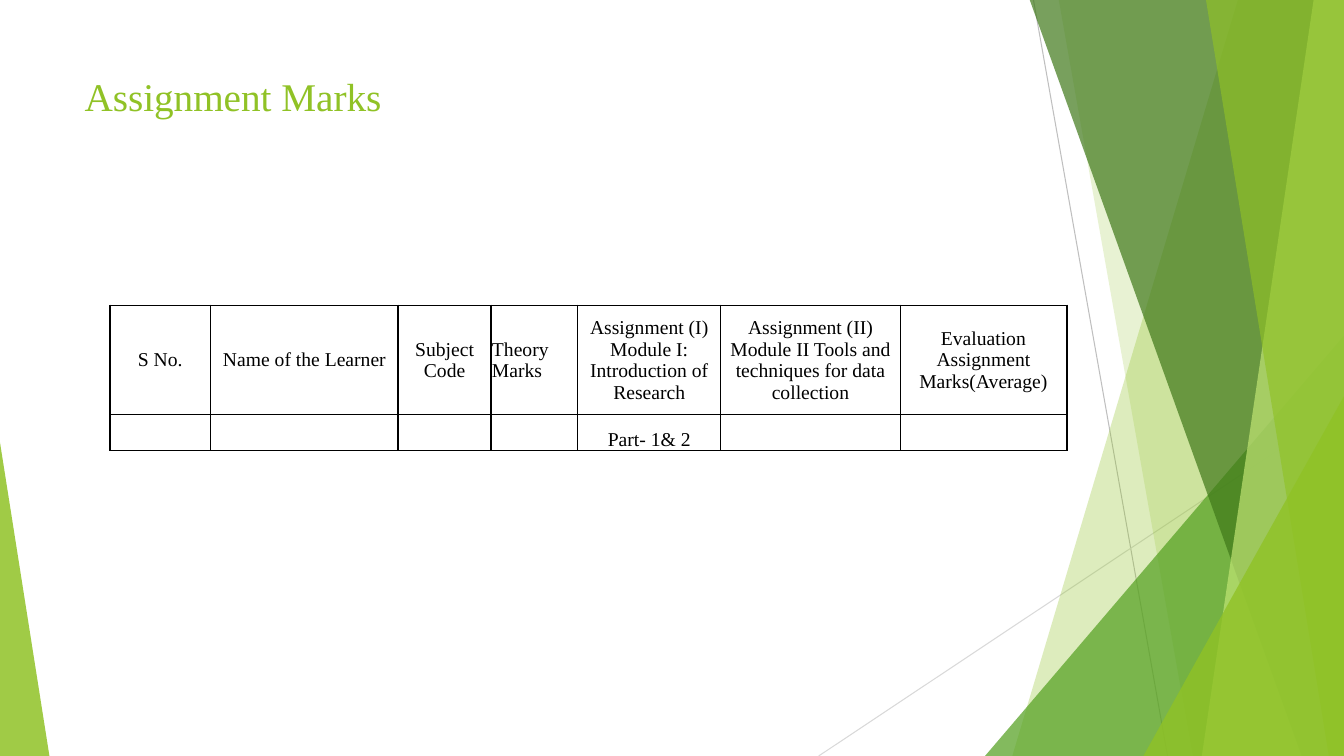
from lxml.etree import SubElement
from pptx import Presentation
from pptx.dml.color import RGBColor
from pptx.enum.shapes import MSO_CONNECTOR, MSO_SHAPE
from pptx.enum.text import MSO_ANCHOR, PP_ALIGN
from pptx.oxml.ns import qn
from pptx.util import Inches, Pt

COLORS = {
    "lime": "90C226", "green": "54A021", "dark": "3F7819", "pale": "C0E474",
    "gray": "BFBFBF", "light": "D9D9D9", "black": "000000",
}
FONT = "Times New Roman"
WIDTH, HEIGHT, TOP = 13.33, 7.5, -0.01
HEADS = [
    "S No.", "Name of the Learner", "Subject Code", "Theory Marks",
    "Assignment (I) Module I: Introduction of Research",
    "Assignment (II) Module II Tools and techniques for data collection",
    "Evaluation Assignment Marks(Average)",
]
ROWS = [HEADS, ["", "", "", "", "Part- 1& 2", "", ""]]
COLS = [1, 1.86, 0.92, 0.86, 1.42, 1.78, 1.65]
TALL = [1.08, 0.36]
THICK = {0, 2, len(COLS)}


def color(name):
    """Return the named color."""
    return RGBColor.from_string(COLORS[name])


def paint(shape, name, alpha):
    """Fill a shape with a see-through color and no outline."""
    shape.shadow.inherit = False
    shape.line.fill.background()
    shape.fill.solid()
    shape.fill.fore_color.rgb = color(name)
    tint = shape.fill._xPr.find(".//" + qn("a:srgbClr"))
    SubElement(tint, qn("a:alpha"), val=str(alpha * 1000))


def add_line(slide, start, end, name):
    """Draw a thin straight line."""
    ends = [Inches(n) for n in (*start, *end)]
    line = slide.shapes.add_connector(MSO_CONNECTOR.STRAIGHT, *ends)
    line.line.color.rgb = color(name)
    line.line.width = Pt(0.75)
    SubElement(line._element.spPr, qn("a:effectLst"))


def add_band(slide, top, base, name, alpha):
    """Draw a slanted band that reaches the right edge."""
    points = [(top, TOP), (WIDTH, TOP), (WIDTH, HEIGHT), (base, HEIGHT)]
    points = [(Inches(x), Inches(y)) for x, y in points]
    path = slide.shapes.build_freeform(*points[0])
    path.add_line_segments(points[1:], close=True)
    paint(path.convert_to_shape(), name, alpha)


def add_wedge(slide, left, top, width, peak, name, alpha):
    """Draw a triangle that stands on the bottom edge."""
    box = [Inches(n) for n in (left, top, width, HEIGHT - top)]
    wedge = slide.shapes.add_shape(MSO_SHAPE.ISOSCELES_TRIANGLE, *box)
    wedge.adjustments[0] = peak
    paint(wedge, name, alpha)


def set_font(para, size, name):
    """Format every run of a paragraph."""
    for run in para.runs:
        run.font.name = FONT
        run.font.size = Pt(size)
        run.font.color.rgb = color(name)


def add_title(slide, text):
    """Add the slide title."""
    box = [Inches(n) for n in (0.74, 0.67, 9.4, 1.44)]
    frame = slide.shapes.add_textbox(*box).text_frame
    frame.word_wrap = True
    frame.text = text
    set_font(frame.paragraphs[0], 28, "lime")


def add_border(cell, side, width):
    """Draw one border of a cell."""
    props = cell._tc.get_or_add_tcPr()
    line = SubElement(props, qn("a:ln" + side), w=str(Pt(width)))
    fill = SubElement(line, qn("a:solidFill"))
    SubElement(fill, qn("a:srgbClr"), val=COLORS["black"])


def fill_cell(cell, text, row, col):
    """Set the text, margins and borders of a cell."""
    cell.margin_left = cell.margin_right = cell.margin_top = Inches(0.01)
    cell.margin_bottom = 0
    cell.vertical_anchor = MSO_ANCHOR.BOTTOM if row else MSO_ANCHOR.MIDDLE
    cell.text_frame.text = text
    para = cell.text_frame.paragraphs[0]
    para.alignment = PP_ALIGN.JUSTIFY if col == 3 else PP_ALIGN.CENTER
    set_font(para, 14, "black")
    heavy = {
        "L": col in THICK, "R": col + 1 in THICK,
        "T": row == 0, "B": row == len(ROWS) - 1,
    }
    for side, bold in heavy.items():
        add_border(cell, side, 1.5 if bold else 1)
    cell.fill.background()


def add_marks(slide):
    """Add the table of marks."""
    box = [Inches(n) for n in (1.09, 3.03, sum(COLS), sum(TALL))]
    table = slide.shapes.add_table(len(ROWS), len(COLS), *box).table
    table.first_row = table.horz_banding = False
    for col, width in enumerate(COLS):
        table.columns[col].width = Inches(width)
    for row, texts in enumerate(ROWS):
        table.rows[row].height = Inches(TALL[row])
        for col, text in enumerate(texts):
            fill_cell(table.cell(row, col), text, row, col)


def add_decor(slide):
    """Draw the green facets from back to front."""
    add_line(slide, (10.25, 0), (11.58, HEIGHT), "gray")
    add_line(slide, (WIDTH, 4.03), (8.12, HEIGHT), "light")
    add_band(slide, 12.28, 10.04, "lime", 30)
    add_band(slide, 10.5, 11.83, "lime", 20)
    add_wedge(slide, 9.77, 3.33, 3.56, 1, "green", 72)
    add_band(slide, 10.21, 12.91, "dark", 70)
    add_band(slide, 13.03, 11.92, "pale", 70)
    add_band(slide, 11.96, 13.18, "lime", 65)
    add_wedge(slide, 11.34, 3.93, 1.99, 1, "lime", 80)
    add_wedge(slide, 0, 4.39, 0.49, 0, "lime", 85)


def main():
    """Build and save the slide."""
    deck = Presentation()
    deck.slide_width, deck.slide_height = Inches(WIDTH), Inches(HEIGHT)
    slide = deck.slides.add_slide(deck.slide_layouts[6])
    add_decor(slide)
    add_title(slide, "Assignment Marks")
    add_marks(slide)
    deck.save("out.pptx")


if __name__ == "__main__":
    main()
